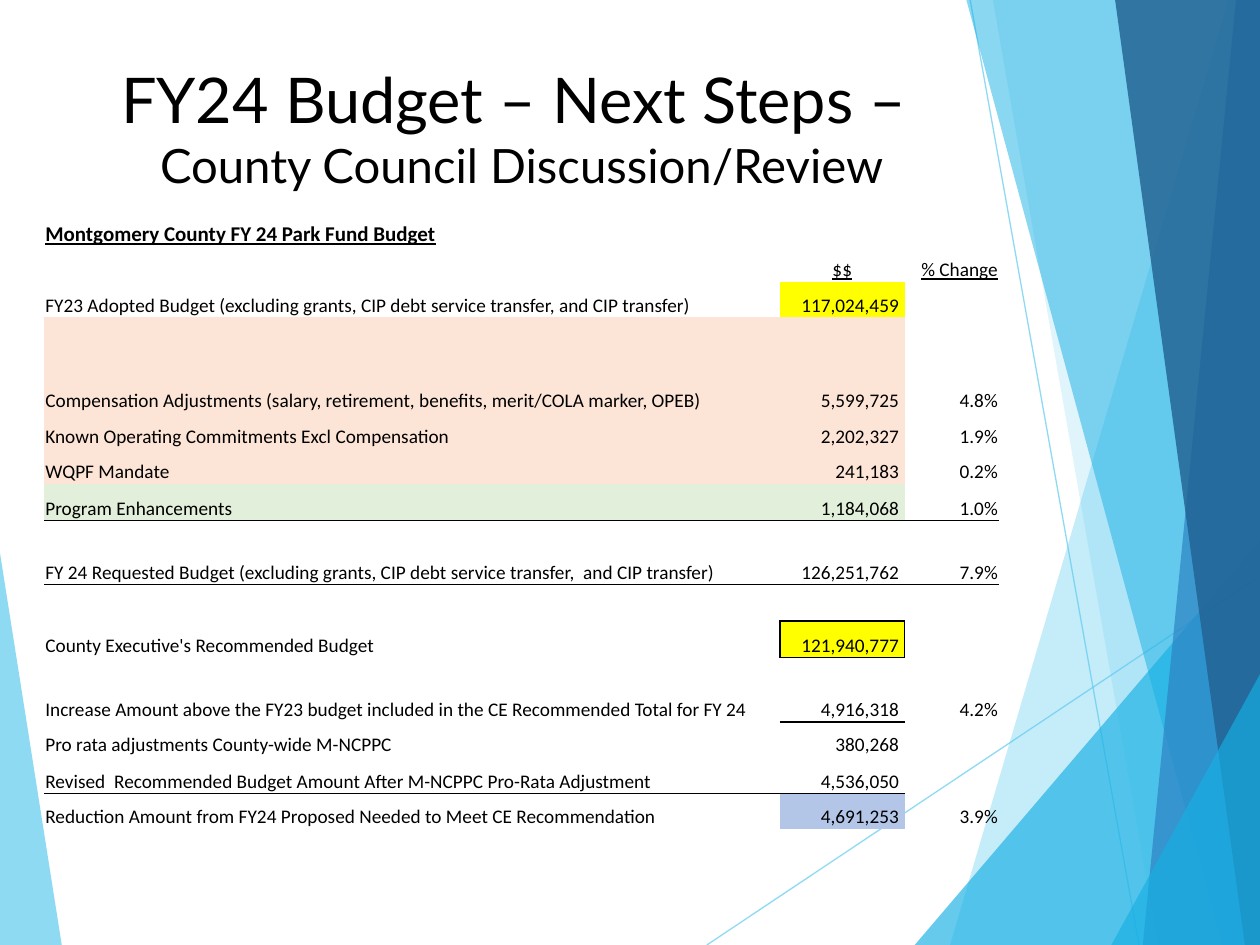
from collections import defaultdict, namedtuple

from lxml import etree
from pptx import Presentation
from pptx.dml.color import RGBColor
from pptx.enum.shapes import MSO_CONNECTOR
from pptx.enum.text import MSO_ANCHOR, PP_ALIGN
from pptx.oxml.ns import qn
from pptx.util import Inches, Pt

STRAIGHT = MSO_CONNECTOR.STRAIGHT
LEFT, CENTER, RIGHT = PP_ALIGN.LEFT, PP_ALIGN.CENTER, PP_ALIGN.RIGHT
MIDDLE, BOTTOM = MSO_ANCHOR.MIDDLE, MSO_ANCHOR.BOTTOM

Theme = namedtuple(
    "Theme",
    "sky cyan blue navy black yellow peach green periwinkle "
    "title_font table_font title subtitle heading body",
)
theme = Theme(
    sky="5FCBEF", cyan="17B0E4", blue="2E83C3", navy="226292", black="000000",
    yellow="FFFF00", peach="FCE4D6", green="E2EFDA", periwinkle="B4C6E7",
    title_font="Lato", table_font="Calibri",
    title=Pt(36), subtitle=Pt(27), heading=Pt(12), body=Pt(11),
)
NO_STYLE_NO_GRID = "{2D5ABB26-0587-4C30-8999-92F81FD0307C}"


def paint(fill, color, opacity=100):
    """Make a fill solid, with its opacity in percent."""
    fill.solid()
    fill.fore_color.rgb = RGBColor.from_string(color)
    if opacity < 100:
        rgb = next(fill._xPr.iter(qn("a:srgbClr")))
        etree.SubElement(rgb, qn("a:alpha"), val=str(opacity * 1000))


def add_border(cell, side):
    line = etree.SubElement(cell._tc.get_or_add_tcPr(), qn(f"a:ln{side}"), w=str(Pt(1)))
    solid = etree.SubElement(line, qn("a:solidFill"))
    etree.SubElement(solid, qn("a:srgbClr"), val=theme.black)


prs = Presentation()
prs.slide_width, prs.slide_height = Inches(10), Inches(7.5)
slide = prs.slides.add_slide(prs.slide_layouts[6])
shapes = slide.shapes

# Background facets: outline, colour, opacity
left_facet = ([(0, 4.39), (0.49, 7.5), (0, 7.5)], theme.sky, 70)
right_facets = [
    ([(9.75, 0), (7.54, 7.5), (10, 7.5), (10, 0)], theme.sky, 36),
    ([(7.88, 0), (9.19, 7.5), (10, 7.5), (10, 0)], theme.sky, 20),
    ([(7.26, 7.5), (10, 4.29), (10, 7.5)], theme.cyan, 66),
    ([(7.67, 0), (9.7, 7.5), (10, 7.5), (10, 0)], theme.cyan, 50),
    ([(9.81, 0), (9.07, 7.5), (10, 7.5), (10, 0)], theme.blue, 70),
    ([(8.85, 0), (9.88, 7.5), (10, 7.5), (10, 0)], theme.navy, 82),
    ([(8.82, 7.5), (10, 5.35), (10, 7.5)], theme.cyan, 66),
]
for outline, color, opacity in [left_facet, *right_facets]:
    points = [(Inches(x), Inches(y)) for x, y in outline]
    builder = shapes.build_freeform(*points[0])
    builder.add_line_segments(points[1:], close=True)
    facet = builder.convert_to_shape()
    facet.shadow.inherit = False
    facet.line.fill.background()
    paint(facet.fill, color, opacity)

for ends in [(5.61, 7.5, 10, 4.57), (7.7, 0, 9.04, 7.5)]:
    ray = shapes.add_connector(STRAIGHT, *(Inches(end) for end in ends))
    ray.line.width = Pt(0.75)
    paint(ray.line.fill, theme.sky, 70)
    etree.SubElement(ray._element.spPr, qn("a:effectLst"))
    # Rays lie just above the left facet, below the right ones
    shapes._spTree.insert(3, ray._element)

# Title
title = shapes.add_textbox(Inches(0.67), Inches(0.42), Inches(6.94), Inches(1.17))
title_frame = title.text_frame
title_frame.word_wrap = True
title_frame.vertical_anchor = MIDDLE
heading = title_frame.paragraphs[0]
heading.alignment = CENTER
heading.font.name = theme.title_font
heading.font.color.rgb = RGBColor.from_string(theme.black)
main_title = heading.add_run()
main_title.text = "FY24 Budget – Next Steps – "
main_title.font.size = theme.title
heading.add_line_break()
subtitle = heading.add_run()
subtitle.text = "County Council Discussion/Review"
subtitle.font.size = theme.subtitle

# Budget table: row height, label, amount, change
budget = [
    (0.29, "Montgomery County FY 24 Park Fund Budget", "", ""),
    (0.28, "", "$$", "% Change"),
    (0.28, "FY23 Adopted Budget (excluding grants, CIP debt service transfer, and CIP transfer)",
     "117,024,459 ", ""),
    (0.76, "Compensation Adjustments (salary, retirement, benefits, merit/COLA marker, OPEB)",
     "5,599,725 ", "4.8%"),
    (0.28, "Known Operating Commitments Excl Compensation", "2,202,327 ", "1.9%"),
    (0.28, "WQPF Mandate", "241,183 ", "0.2%"),
    (0.29, "Program Enhancements", "1,184,068 ", "1.0%"),
    (0.51, "FY 24 Requested Budget (excluding grants, CIP debt service transfer,  and CIP transfer)",
     "126,251,762 ", "7.9%"),
    (0.29, "", "", ""),
    (0.29, "County Executive's Recommended Budget", "121,940,777 ", ""),
    (0.51, "Increase Amount above the FY23 budget included in the CE Recommended Total for FY 24",
     "4,916,318 ", "4.2%"),
    (0.28, "Pro rata adjustments County-wide M-NCPPC", "380,268 ", ""),
    (0.29, "Revised  Recommended Budget Amount After M-NCPPC Pro-Rata Adjustment",
     "4,536,050 ", ""),
    (0.28, "Reduction Amount from FY24 Proposed Needed to Meet CE Recommendation",
     "4,691,253 ", "3.9%"),
]
COLUMN_WIDTHS = (5.84, 0.99, 0.75)
HEADING_ROW, HEADER_ROW, ENHANCEMENTS, EXECUTIVE, REVISED = 0, 1, 6, 9, 12
AMOUNT = 1

fills = {(2, AMOUNT): theme.yellow, (EXECUTIVE, AMOUNT): theme.yellow,
         (13, AMOUNT): theme.periwinkle}
for column in (0, AMOUNT):
    fills.update({(row, column): theme.peach for row in (3, 4, 5)})
    fills[ENHANCEMENTS, column] = theme.green

# Each edge is set on both cells that share it
borders = defaultdict(set)
ruled = [(ENHANCEMENTS, 0), (ENHANCEMENTS, 1), (ENHANCEMENTS, 2),
         (EXECUTIVE - 1, AMOUNT), (EXECUTIVE, AMOUNT), (REVISED, 0), (REVISED, 1)]
for row, column in ruled:
    borders[row, column].add("B")
    borders[row + 1, column].add("T")
for column in (0, AMOUNT):
    borders[EXECUTIVE, column].add("R")
    borders[EXECUTIVE, column + 1].add("L")

frame = shapes.add_table(len(budget), len(COLUMN_WIDTHS), Inches(0.35), Inches(1.67),
                         Inches(sum(COLUMN_WIDTHS)), Inches(sum(r[0] for r in budget)))
table = frame.table
table.first_row = table.horz_banding = False
table._tbl.tblPr.find(qn("a:tableStyleId")).text = NO_STYLE_NO_GRID
for column, width in enumerate(COLUMN_WIDTHS):
    table.columns[column].width = Inches(width)

for row, (height, *texts) in enumerate(budget):
    table.rows[row].height = Inches(height)
    for column, text in enumerate(texts):
        cell = table.cell(row, column)
        cell.vertical_anchor = BOTTOM
        cell.margin_left = cell.margin_right = cell.margin_top = Inches(0.01)
        cell.margin_bottom = 0
        for side in "LRTB":
            if side in borders[row, column]:
                add_border(cell, side)
        if (row, column) in fills:
            paint(cell.fill, fills[row, column])
        else:
            cell.fill.background()

        entry = cell.text_frame.paragraphs[0]
        size = theme.heading if row == HEADING_ROW else theme.body
        if not text:
            # An empty cell takes its line height from the end mark
            etree.SubElement(entry._p, qn("a:endParaRPr"), sz=str(int(size.pt * 100)))
            continue
        entry.text = text
        entry.alignment = LEFT if column == 0 else RIGHT
        if (row, column) == (HEADER_ROW, AMOUNT):
            entry.alignment = CENTER
        entry.font.name = theme.table_font
        entry.font.size = size
        entry.font.color.rgb = RGBColor.from_string(theme.black)
        entry.font.bold = row == HEADING_ROW
        entry.font.underline = row in (HEADING_ROW, HEADER_ROW)

prs.save("out.pptx")
